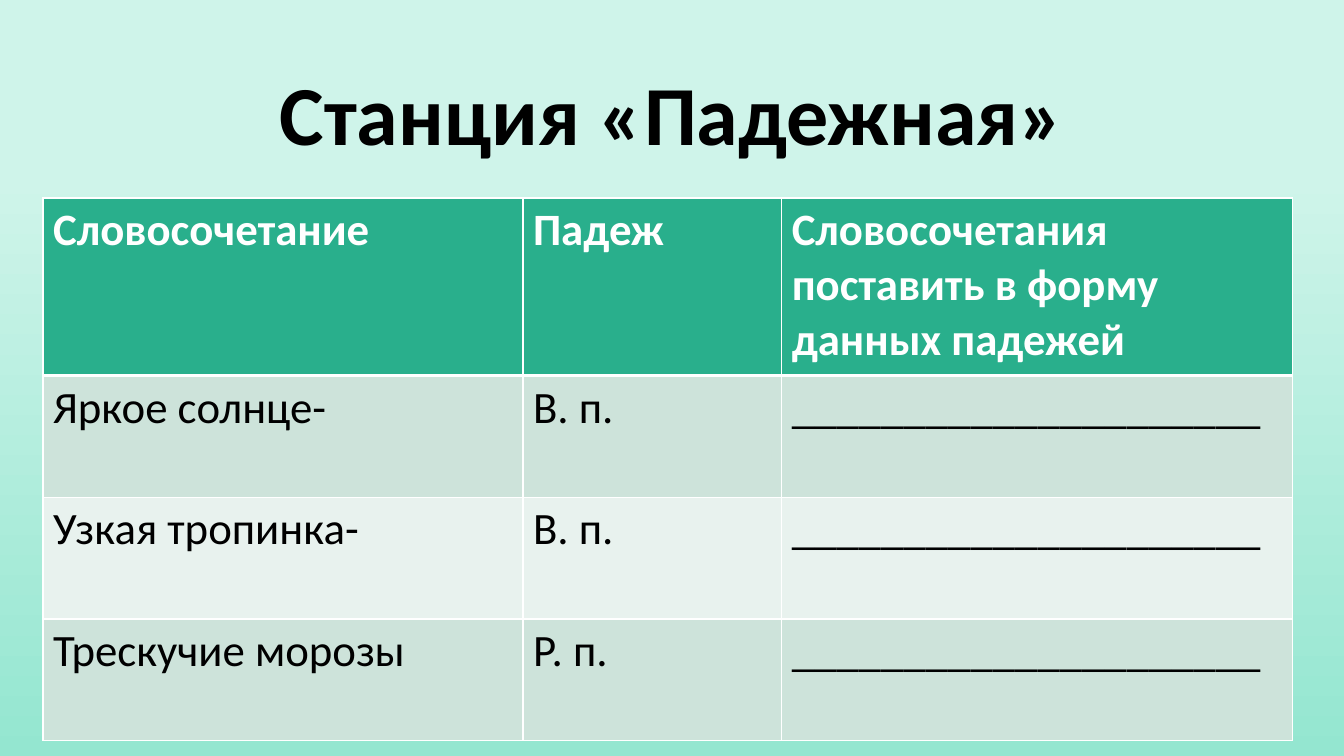
import pptx
import pptx.dml.color
import pptx.enum.text
import pptx.oxml
import pptx.oxml.ns
import pptx.util
from lxml import etree

SLIDE_WIDTH, SLIDE_HEIGHT = 13.33, 7.5
FONT = "Calibri"
BLANK_LINE = "_" * 21
HEADINGS = ("Словосочетание", "Падеж", "Словосочетания поставить в форму данных падежей")
EXERCISES = (
    ("Яркое солнце-", "В. п."),
    ("Узкая тропинка-", "В. п."),
    ("Трескучие морозы", "Р. п."),
)
COLUMN_SHARES = (0.384, 0.207, 0.409)
ROW_SHARES = (0.327,) + (0.673 / len(EXERCISES),) * len(EXERCISES)
HEADING_FILL = "29AF8C"
BAND_FILLS = ("CDE3DA", "E8F2EE")


def color(hex_value):
    return pptx.dml.color.RGBColor.from_string(hex_value)


def style_text(frame, size, hex_value, bold):
    for paragraph in frame.paragraphs:
        for run in paragraph.runs:
            run.font.name = FONT
            run.font.size = pptx.util.Pt(size)
            run.font.bold = bold
            run.font.color.rgb = color(hex_value)


def paint_background(slide):
    fill = slide.background.fill
    fill.gradient()
    fill.gradient_angle = 270
    for stop, position, hex_value in zip(fill.gradient_stops, (0.23, 1), ("CFF4EA", "94E6D0")):
        stop.position = position
        stop.color.rgb = color(hex_value)


def place_title(slide, box):
    title = slide.shapes.title
    title.left, title.top, title.width, title.height = map(pptx.util.Inches, box)
    frame = title.text_frame
    frame.text = "Станция «Падежная»"
    frame.auto_size = pptx.enum.text.MSO_AUTO_SIZE.NONE
    frame.vertical_anchor = pptx.enum.text.MSO_ANCHOR.BOTTOM
    frame.paragraphs[0].alignment = pptx.enum.text.PP_ALIGN.CENTER
    frame.paragraphs[0].line_spacing = 0.9
    style_text(frame, 60, "000000", True)


def draw_borders(cell, top, bottom):
    properties = cell._tc.get_or_add_tcPr()
    for index, (side, points) in enumerate((("L", 1), ("R", 1), ("T", top), ("B", bottom))):
        line = etree.Element(pptx.oxml.ns.qn(f"a:ln{side}"), w=str(pptx.util.Pt(points)))
        solid = etree.SubElement(line, pptx.oxml.ns.qn("a:solidFill"))
        etree.SubElement(solid, pptx.oxml.ns.qn("a:srgbClr"), val="FFFFFF")
        properties.insert(index, line)


def place_exercise_table(slide, box):
    left, top, width, height = box
    rows = [HEADINGS] + [exercise + (BLANK_LINE,) for exercise in EXERCISES]
    table = slide.shapes.add_table(len(rows), len(HEADINGS), *map(pptx.util.Inches, box)).table
    for column, share in zip(table.columns, COLUMN_SHARES):
        column.width = pptx.util.Inches(width * share)
    for row, share in zip(table.rows, ROW_SHARES):
        row.height = pptx.util.Inches(height * share)
    for row_index, texts in enumerate(rows):
        heading = row_index == 0
        for column_index, text in enumerate(texts):
            cell = table.cell(row_index, column_index)
            cell.text_frame.text = text
            style_text(cell.text_frame, 32, "FFFFFF" if heading else "000000", heading)
            cell.fill.solid()
            cell.fill.fore_color.rgb = color(HEADING_FILL if heading else BAND_FILLS[(row_index - 1) % 2])
            draw_borders(cell, top=3 if row_index == 1 else 1, bottom=3 if heading else 1)


def main():
    presentation = pptx.Presentation()
    presentation.slide_width = pptx.util.Inches(SLIDE_WIDTH)
    presentation.slide_height = pptx.util.Inches(SLIDE_HEIGHT)
    slide = presentation.slides.add_slide(presentation.slide_layouts[0])
    subtitle = slide.placeholders[1].element
    subtitle.getparent().remove(subtitle)
    paint_background(slide)
    place_title(slide, (SLIDE_WIDTH / 8, SLIDE_HEIGHT * 0.08, SLIDE_WIDTH * 0.75, SLIDE_HEIGHT / 7))
    place_exercise_table(
        slide, (SLIDE_WIDTH * 0.032, SLIDE_HEIGHT * 0.262, SLIDE_WIDTH * 0.93, SLIDE_HEIGHT * 0.718)
    )
    presentation.save("out.pptx")


if __name__ == "__main__":
    main()
